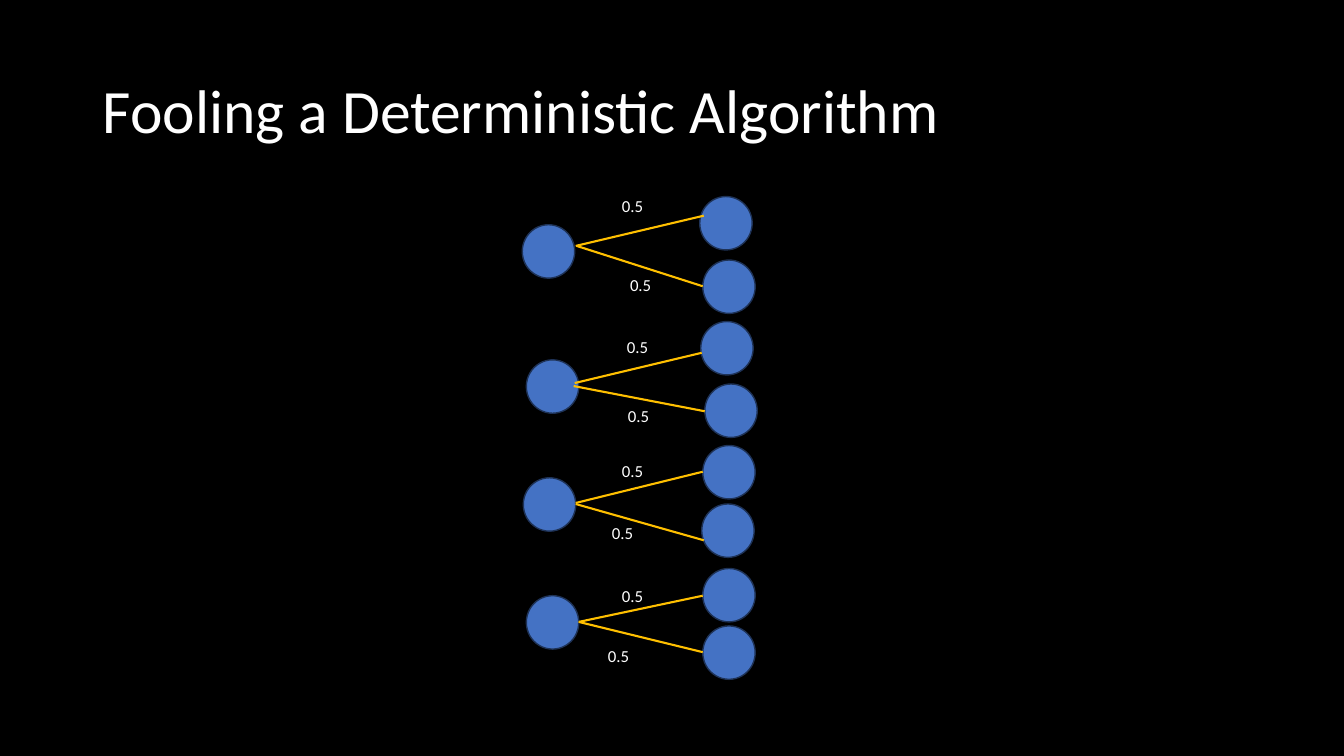
from dataclasses import dataclass

from lxml import etree
from pptx import Presentation
from pptx import util as u
from pptx.dml.color import RGBColor
from pptx.enum import shapes, text
from pptx.oxml.ns import qn
from pptx.slide import Slide
from pptx.text.text import TextFrame

Point = tuple[float, float]


@dataclass(frozen=True)
class Theme:
    font: str = "Calibri"
    background: RGBColor = RGBColor(0x00, 0x00, 0x00)
    ink: RGBColor = RGBColor(0xFF, 0xFF, 0xFF)
    node: RGBColor = RGBColor(0x44, 0x72, 0xC4)
    node_line: RGBColor = RGBColor(0x1E, 0x32, 0x56)
    edge: RGBColor = RGBColor(0xFF, 0xC0, 0x00)
    title_size: int = 44
    label_size: int = 12


@dataclass(frozen=True)
class Branch:
    """One right node with the edge that reaches it and the edge's label."""
    node: Point
    start: Point
    end: Point
    label: Point


@dataclass(frozen=True)
class Fork:
    """One left node and its two branches."""
    node: Point
    upper: Branch
    lower: Branch


THEME = Theme()
NODE_SIZE = (0.52, 0.53)
LABEL_SIZE = (0.52, 0.3)
PROBABILITY = "0.5"

FORKS = [
    Fork((5.18, 2.23),
         Branch((6.94, 1.95), (5.71, 2.44), (6.98, 2.14), (6.07, 1.89)),
         Branch((6.97, 2.58), (5.72, 2.44), (6.97, 2.84), (6.15, 2.68))),
    Fork((5.22, 3.57),
         Branch((6.95, 3.19), (5.7, 3.8), (6.96, 3.5), (6.12, 3.29)),
         Branch((6.99, 3.81), (5.69, 3.83), (6.99, 4.08), (6.13, 3.98))),
    Fork((5.19, 4.74),
         Branch((6.97, 4.42), (5.71, 4.99), (6.97, 4.68), (6.07, 4.52)),
         Branch((6.96, 5), (5.71, 5), (6.98, 5.36), (5.97, 5.14))),
    Fork((5.22, 5.91),
         Branch((6.97, 5.64), (5.74, 6.17), (6.97, 5.91), (6.07, 5.76)),
         Branch((6.97, 6.21), (5.74, 6.17), (6.97, 6.47), (5.93, 6.36))),
]


def inches(*values: float) -> list[u.Length]:
    return [u.Inches(v) for v in values]


def add_run(tf: TextFrame, words: str, size: int) -> None:
    r = tf.paragraphs[0].add_run()
    r.text = words
    r.font.name = THEME.font
    r.font.size = u.Pt(size)
    r.font.color.rgb = THEME.ink


def add_title(s: Slide, words: str) -> None:
    sp = s.shapes.title
    sp.left, sp.top, sp.width, sp.height = inches(0.92, 0.4, 11.5, 1.45)
    tf = sp.text_frame
    tf.word_wrap = True
    tf.auto_size = text.MSO_AUTO_SIZE.NONE
    tf.vertical_anchor = text.MSO_ANCHOR.MIDDLE
    p = tf.paragraphs[0]
    p.alignment = text.PP_ALIGN.LEFT
    p.line_spacing = 0.9
    add_run(tf, words, THEME.title_size)


def add_node(s: Slide, at: Point) -> None:
    sp = s.shapes.add_shape(shapes.MSO_SHAPE.OVAL, *inches(*at, *NODE_SIZE))
    sp.shadow.inherit = False
    sp.fill.solid()
    sp.fill.fore_color.rgb = THEME.node
    sp.line.color.rgb = THEME.node_line
    sp.line.width = u.Pt(1)


def add_edge(s: Slide, start: Point, end: Point) -> None:
    line = s.shapes.add_connector(shapes.MSO_CONNECTOR.STRAIGHT,
                                  *inches(*start, *end))
    line.line.color.rgb = THEME.edge
    line.line.width = u.Pt(1.5)
    etree.SubElement(line._element.spPr, qn("a:effectLst"))


def add_label(s: Slide, at: Point) -> None:
    tf = s.shapes.add_textbox(*inches(*at, *LABEL_SIZE)).text_frame
    tf.word_wrap = True
    tf.auto_size = text.MSO_AUTO_SIZE.SHAPE_TO_FIT_TEXT
    add_run(tf, PROBABILITY, THEME.label_size)


def main() -> None:
    prs = Presentation()
    prs.slide_width, prs.slide_height = inches(13.33, 7.5)
    s = prs.slides.add_slide(prs.slide_layouts[5])
    s.background.fill.solid()
    s.background.fill.fore_color.rgb = THEME.background

    add_title(s, "Fooling a Deterministic Algorithm")

    # Nodes lie behind the edges, labels in front
    branches = [b for fork in FORKS for b in (fork.upper, fork.lower)]
    for item in [*branches, *FORKS]:
        add_node(s, item.node)
    for branch in branches:
        add_edge(s, branch.start, branch.end)
    for branch in branches:
        add_label(s, branch.label)

    prs.save("out.pptx")


if __name__ == "__main__":
    main()
